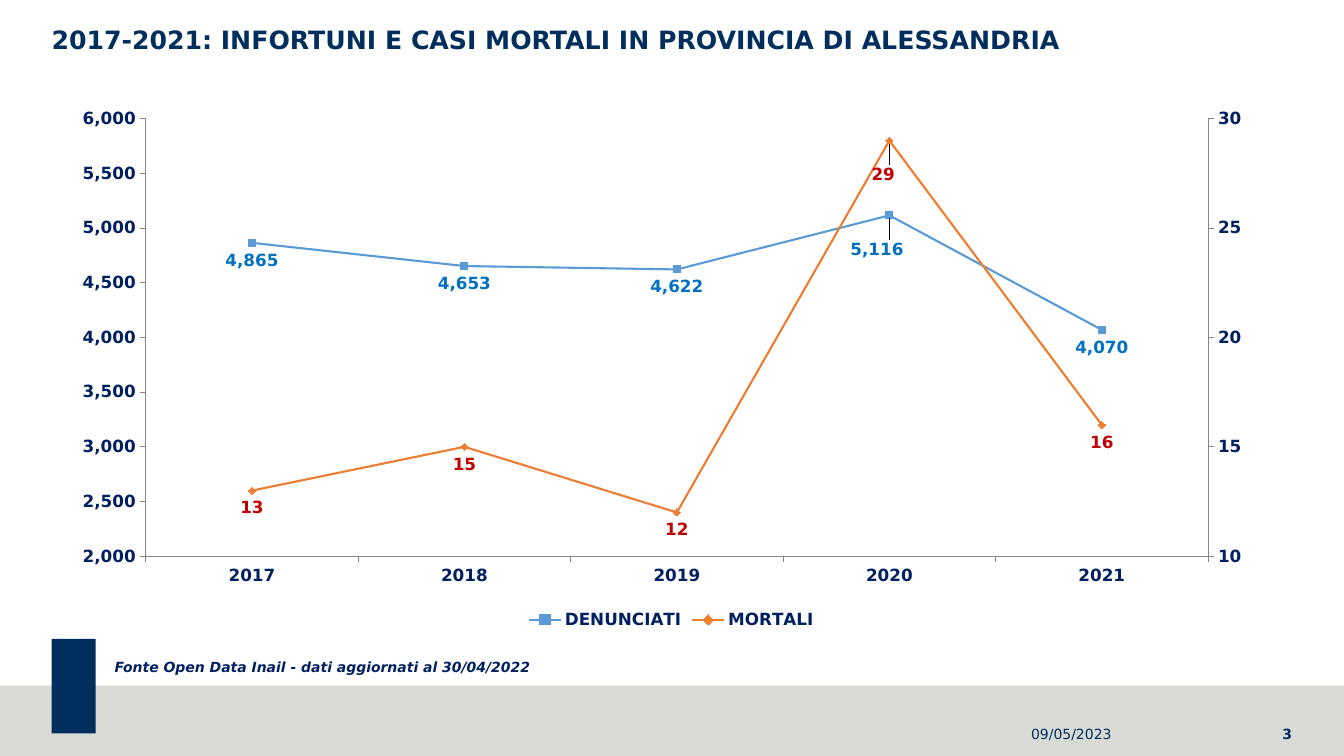
"""Build the slide on workplace accidents and deaths in the province of Alessandria."""
from copy import deepcopy

from lxml import etree
from pptx import Presentation
from pptx import util as u
from pptx.chart.data import CategoryChartData
from pptx.dml.color import RGBColor
from pptx.enum import chart as c, shapes, text
from pptx.oxml.ns import qn

FONT = "DejaVu Sans"
NAVY = "002E5D"
DARK_BLUE = "002060"


def color(hex_string):
    """Turn a hex string into a colour."""
    return RGBColor.from_string(hex_string)


def style(font, size, hex_string, bold=True, italic=False):
    """Set the look of a font."""
    font.name, font.size = FONT, u.Pt(size)
    font.bold, font.italic = bold, italic
    font.color.rgb = color(hex_string)


presentation = Presentation()
presentation.slide_width, presentation.slide_height = u.Cm(33.87), u.Cm(19.05)
slide = presentation.slides.add_slide(presentation.slide_layouts[6])

for left, top, width, height, fill in [
    (0, 17.28, 33.87, 1.77, "D9D9D6"),
    (1.3, 16.1, 1.11, 2.38, NAVY),
]:
    shape = slide.shapes.add_shape(
        shapes.MSO_SHAPE.RECTANGLE, u.Cm(left), u.Cm(top), u.Cm(width), u.Cm(height))
    shape.shadow.inherit = False
    shape.fill.solid()
    shape.fill.fore_color.rgb = color(fill)
    shape.line.fill.background()

LEFT, RIGHT = text.PP_ALIGN.LEFT, text.PP_ALIGN.RIGHT
TOP, MIDDLE = text.MSO_ANCHOR.TOP, text.MSO_ANCHOR.MIDDLE
for words, left, top, width, height, inset, size, hex_string, bold, italic, align, anchor in [
    ("2017-2021: INFORTUNI E CASI MORTALI IN PROVINCIA DI ALESSANDRIA",
     1.3, 0.71, 31.29, 1.93, 0, 18, NAVY, True, False, LEFT, TOP),
    ("Fonte Open Data Inail - dati aggiornati al 30/04/2022",
     2.64, 16.48, 29.95, 0.69, 0.25, 10, DARK_BLUE, True, True, LEFT, TOP),
    ("09/05/2023", 24, 17.98, 4.01, 1.02, 0, 10, NAVY, False, False, RIGHT, MIDDLE),
    ("3", 28.52, 17.98, 4.04, 1.02, 0, 10, NAVY, True, False, RIGHT, MIDDLE),
]:
    box = slide.shapes.add_textbox(u.Cm(left), u.Cm(top), u.Cm(width), u.Cm(height))
    frame = box.text_frame
    frame.word_wrap = True
    frame.vertical_anchor = anchor
    frame.margin_left = frame.margin_right = u.Cm(inset)
    frame.margin_top = frame.margin_bottom = u.Cm(inset / 2)
    frame.text = words
    paragraph = frame.paragraphs[0]
    paragraph.alignment = align
    paragraph.line_spacing = 0.9 if size == 18 else 1
    style(paragraph.runs[0].font, size, hex_string, bold, italic)

chart_data = CategoryChartData(number_format="#,##0")
chart_data.categories = ["2017", "2018", "2019", "2020", "2021"]
chart_data.add_series("DENUNCIATI", [4865, 4653, 4622, 5116, 4070])
chart_data.add_series("MORTALI", [13, 15, 12, 29, 16])
chart = slide.shapes.add_chart(
    c.XL_CHART_TYPE.LINE_MARKERS, u.Cm(1.3), u.Cm(2.03), u.Cm(31.24), u.Cm(13.94),
    chart_data).chart
chart.has_title = False
chart.font.name, chart.font.size = "Calibri", u.Pt(10)
chart.has_legend = True
chart.legend.position = c.XL_LEGEND_POSITION.BOTTOM
chart.legend.include_in_layout = False
style(chart.legend.font, 12, DARK_BLUE)

for axis in (chart.category_axis, chart.value_axis):
    axis.major_tick_mark = c.XL_TICK_MARK.OUTSIDE
    axis.minor_tick_mark = c.XL_TICK_MARK.NONE
    axis.format.line.color.rgb = color("868686")
    axis.format.line.width = u.Pt(0.75)
    style(axis.tick_labels.font, 12, DARK_BLUE)
value_axis = chart.value_axis
value_axis.minimum_scale, value_axis.maximum_scale, value_axis.major_unit = 2000, 6000, 500
value_axis.tick_labels.number_format = "#,##0"
value_axis.tick_labels.number_format_is_linked = False
value_axis.major_gridlines.format.line.color.rgb = color("FFFFFF")
value_axis.major_gridlines.format.line.width = u.Pt(0.75)

plot = chart.plots[0]
plot.vary_by_categories = False
for series, line_color, label_color, marker, shift in zip(
        plot.series, ["5B9BD5", "ED7D31"], ["0070C0", "C00000"],
        [c.XL_MARKER_STYLE.SQUARE, c.XL_MARKER_STYLE.DIAMOND],
        [(-0.01, 0.03), (-0.005, 0.03)]):
    series.smooth = False
    series.format.line.color.rgb = color(line_color)
    series.format.line.width = u.Pt(1.5)
    series.marker.style, series.marker.size = marker, 5
    series.marker.format.fill.solid()
    series.marker.format.fill.fore_color.rgb = color(line_color)
    series.marker.format.line.color.rgb = color(line_color)
    labels = series.data_labels
    labels.show_value = True
    labels.number_format, labels.number_format_is_linked = "#,##0", False
    peak_label = series.points[3].data_label
    for label in (labels, peak_label):
        label.position = c.XL_LABEL_POSITION.BELOW
        style(label.font, 12, label_color)
    layout = etree.Element(qn("c:layout"))
    manual = etree.SubElement(layout, qn("c:manualLayout"))
    for name, value in zip("xy", shift):
        etree.SubElement(manual, qn(f"c:{name}")).set("val", str(value))
    labels._element.find(qn("c:dLbl")).find(qn("c:idx")).addnext(layout)

plot_area = chart._chartSpace.chart.plotArea
left_lines = plot_area.find(qn("c:lineChart"))
right_lines = deepcopy(left_lines)
left_lines.remove(left_lines.findall(qn("c:ser"))[1])
right_lines.remove(right_lines.findall(qn("c:ser"))[0])
left_lines.addnext(right_lines)
for axis_id, number in zip(right_lines.findall(qn("c:axId")), ("50010", "50020")):
    axis_id.set("val", number)

left_values = plot_area.find(qn("c:valAx"))
right_values = deepcopy(left_values)
right_categories = deepcopy(plot_area.find(qn("c:catAx")))
right_values.remove(right_values.find(qn("c:majorGridlines")))
left_values.addnext(right_values)
right_values.addnext(right_categories)
for axis, settings in [
    (right_values, {"axId": "50020", "crossAx": "50010", "axPos": "r", "crosses": "max",
                    "min": "10", "max": "30", "majorUnit": "5"}),
    (right_categories, {"axId": "50010", "crossAx": "50020", "delete": "1"}),
]:
    for name, value in settings.items():
        next(axis.iter(qn(f"c:{name}"))).set("val", value)

for old_layout in plot_area.findall(qn("c:layout")):
    plot_area.remove(old_layout)
plot_layout = etree.Element(qn("c:layout"))
manual = etree.SubElement(plot_layout, qn("c:manualLayout"))
for name, value in [("layoutTarget", "inner"), ("xMode", "edge"), ("yMode", "edge"),
                    ("x", "0.076"), ("y", "0.069"), ("w", "0.857"), ("h", "0.791")]:
    etree.SubElement(manual, qn(f"c:{name}")).set("val", value)
plot_area.insert(0, plot_layout)

presentation.save("out.pptx")
